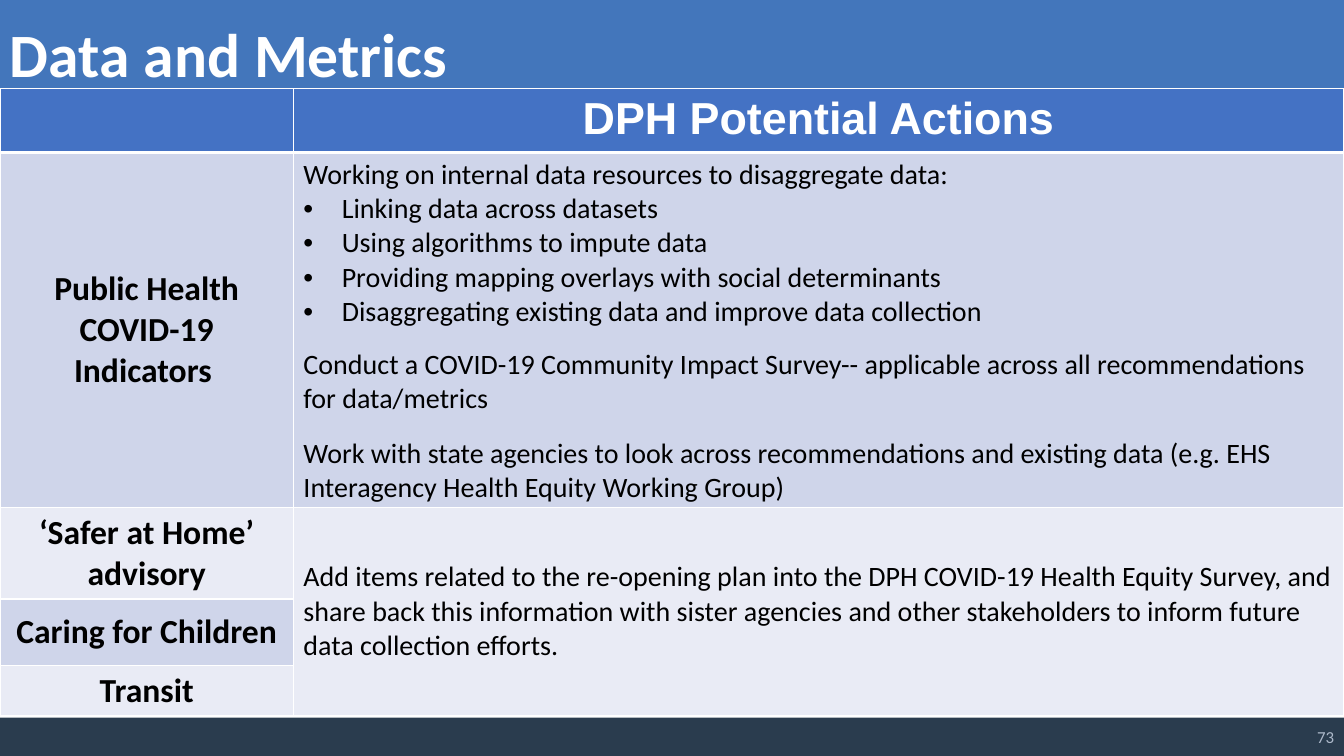
import pptx
import pptx.dml.color
import pptx.enum.shapes
import pptx.enum.text
import pptx.oxml
import pptx.oxml.ns
import pptx.util

Inches = pptx.util.Inches
Pt = pptx.util.Pt
Align = pptx.enum.text.PP_ALIGN
Anchor = pptx.enum.text.MSO_ANCHOR

WHITE, BLACK = "FFFFFF", "000000"
BLUE, BAND, PALE = "4472C4", "CFD5EA", "E9EBF5"
WIDE, HIGH = 13.33, 7.5

ACTIONS = [
    ("Working on internal data resources to disaggregate data:", False, 0),
    ("Linking data across datasets", True, 0),
    ("Using algorithms to impute data", True, 0),
    ("Providing mapping overlays with social determinants", True, 0),
    ("Disaggregating existing data and improve data collection", True, 0),
    ("Conduct a COVID-19 Community Impact Survey-- applicable across all "
     "recommendations for data/metrics", False, 13.4),
    ("Work with state agencies to look across recommendations and existing data "
     "(e.g. EHS Interagency Health Equity Working Group)", False, 14.6),
]
SURVEY = [
    ("Add items related to the re-opening plan into the DPH COVID-19 Health Equity "
     "Survey, and share back this information with sister agencies and other "
     "stakeholders to inform future data collection efforts.", False, 0),
]
TOPICS = [
    ("Public Health COVID-19 Indicators ", BAND),
    ("‘Safer at Home’ advisory", PALE),
    ("Caring for Children", BAND),
    ("Transit", PALE),
]


def color(code):
    return pptx.dml.color.RGBColor.from_string(code)


def add_run(para, text, size, code, bold=False, font="Calibri"):
    run = para.add_run()
    run.text = text
    run.font.size = Pt(size)
    run.font.name = font
    run.font.bold = bold
    run.font.color.rgb = color(code)


def add_bar(slide, box, code):
    rect = pptx.enum.shapes.MSO_SHAPE.RECTANGLE
    bar = slide.shapes.add_shape(rect, *map(Inches, box))
    bar.shadow.inherit = False
    bar.fill.solid()
    bar.fill.fore_color.rgb = color(code)
    bar.line.fill.background()


def add_label(slide, box, text, size, code, bold, align, anchor):
    frame = slide.shapes.add_textbox(*map(Inches, box)).text_frame
    frame.word_wrap = True
    frame.vertical_anchor = anchor
    para = frame.paragraphs[0]
    para.alignment = align
    add_run(para, text, size, code, bold)


def add_header(slide, box):
    left, top, width, height = box
    add_bar(slide, box, "4376BB")
    add_label(slide, (left, top + 0.11, width - 0.32, height - 0.23),
              "Data and Metrics", 44, WHITE, True, Align.LEFT, Anchor.TOP)


def add_footer(slide, box):
    left, top, width, height = box
    add_bar(slide, box, "2A3C4E")
    add_label(slide, (left + width - 2.99, top - 0.01, 2.99, height + 0.02),
              "73", 12, "ADB9CA", False, Align.RIGHT, Anchor.MIDDLE)


def style_cell(cell, fill, row):
    props = cell._tc.get_or_add_tcPr()
    space = pptx.oxml.ns.nsdecls("a")
    heavy = {(0, "B"), (1, "T")}
    for side in "LRTB":
        width = Pt(3 if (row, side) in heavy else 1)
        props.append(pptx.oxml.parse_xml(
            f'<a:ln{side} {space} w="{width}"><a:solidFill>'
            f'<a:srgbClr val="{WHITE}"/></a:solidFill></a:ln{side}>'))
    cell.fill.solid()
    cell.fill.fore_color.rgb = color(fill)
    cell.vertical_anchor = Anchor.MIDDLE


def set_bullet(para):
    props = para._p.get_or_add_pPr()
    props.set("marL", str(Inches(0.38)))
    props.set("indent", str(-Inches(0.38)))
    space = pptx.oxml.ns.nsdecls("a")
    props.append(pptx.oxml.parse_xml(f'<a:buFont {space} typeface="Arial"/>'))
    props.append(pptx.oxml.parse_xml(f'<a:buChar {space} char="•"/>'))


def add_lines(cell, lines):
    frame = cell.text_frame
    for i, (text, bullet, gap) in enumerate(lines):
        para = frame.add_paragraph() if i else frame.paragraphs[0]
        if gap:
            para.space_before = Pt(gap)
        if bullet:
            set_bullet(para)
        add_run(para, text, 20, BLACK)


def add_head(cell, text, size, code, font="Calibri"):
    para = cell.text_frame.paragraphs[0]
    para.alignment = Align.CENTER
    add_run(para, text, size, code, True, font)


def add_grid(slide, box):
    tall = [0.62, 3.52, 0.91, 0.66, 0.5]
    grid = slide.shapes.add_table(len(tall), 2, *map(Inches, box)).table
    first = 2.91
    for col, width in zip(grid.columns, (first, box[2] - first)):
        col.width = Inches(width)
    for row, height in zip(grid.rows, tall):
        row.height = Inches(height)
    fills = [(BLUE, BLUE), (BAND, BAND)] + [(fill, PALE) for _, fill in TOPICS[1:]]
    for r, pair in enumerate(fills):
        for c, fill in enumerate(pair):
            style_cell(grid.cell(r, c), fill, r)
    grid.cell(2, 1).merge(grid.cell(4, 1))
    add_head(grid.cell(0, 1), "DPH Potential Actions", 32, WHITE, "Arial")
    for r, (text, _) in enumerate(TOPICS, 1):
        add_head(grid.cell(r, 0), text, 24, BLACK)
    add_lines(grid.cell(1, 1), ACTIONS)
    add_lines(grid.cell(2, 1), SURVEY)
    for r in (0, 1):
        grid.cell(r, 1).vertical_anchor = Anchor.TOP


def main():
    deck = pptx.Presentation()
    deck.slide_width, deck.slide_height = Inches(WIDE), Inches(HIGH)
    slide = deck.slides.add_slide(deck.slide_layouts[6])
    add_header(slide, (0, 0, WIDE, 1.07))
    add_footer(slide, (0, HIGH - 0.38, WIDE, 0.38))
    add_grid(slide, (0, 0.88, WIDE, 6.21))
    deck.save("out.pptx")


if __name__ == "__main__":
    main()
